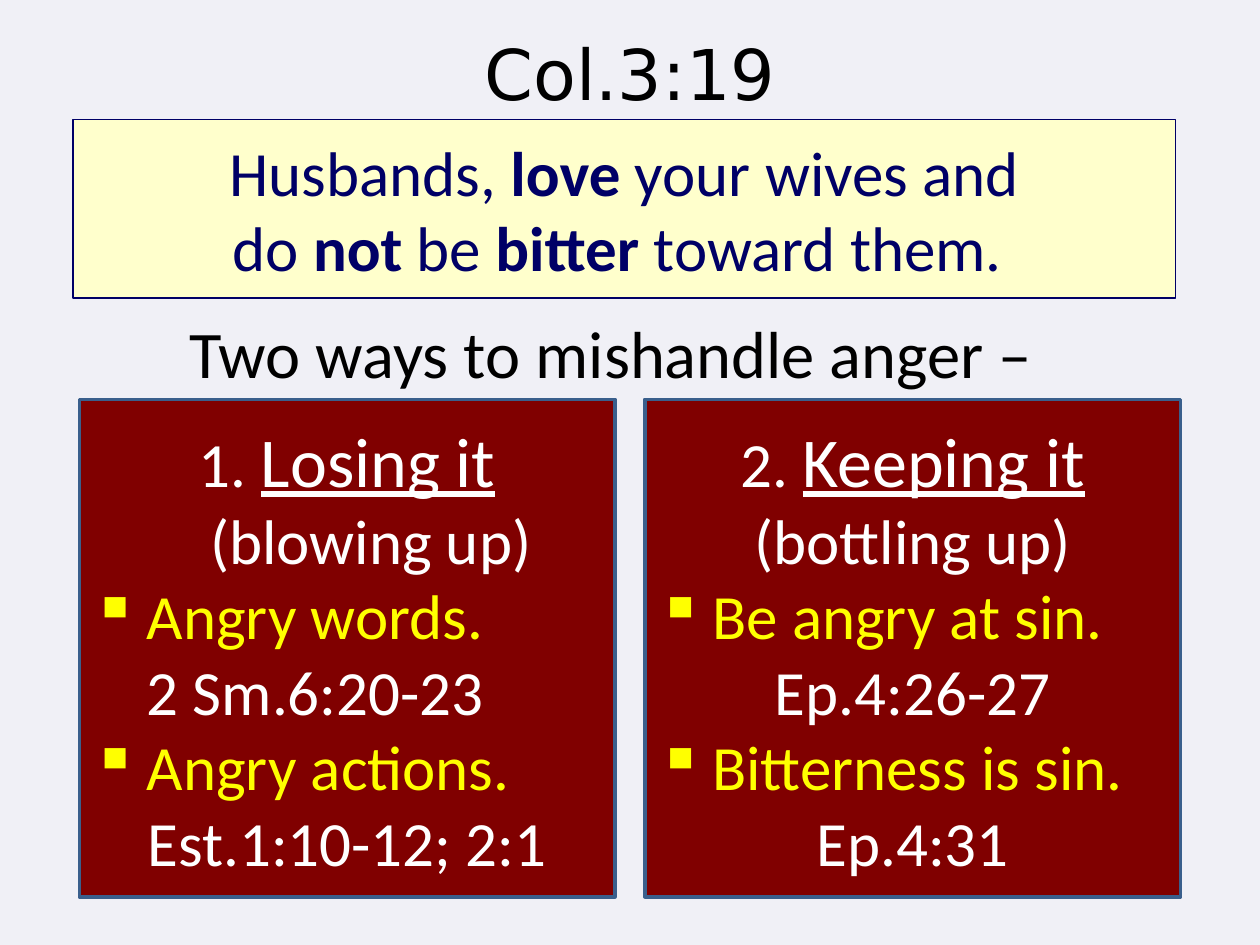
from lxml.etree import SubElement
from pptx import Presentation
from pptx.dml.color import RGBColor
from pptx.enum.shapes import MSO_SHAPE
from pptx.enum.text import MSO_ANCHOR, MSO_AUTO_SIZE, PP_ALIGN
from pptx.oxml.ns import qn
from pptx.util import Cm, Pt

COLORS = {
    "page": "F0F0F6", "black": "000000", "navy": "000066", "cream": "FFFFCC",
    "maroon": "800000", "steel": "3A5F8C", "white": "FFFFFF", "yellow": "FFFF00",
}

# Run formats
TITLE = {"name": "DejaVu Sans", "size": Pt(40), "color": "black"}
LEAD_IN = {"name": "Calibri", "size": Pt(38), "color": "black"}
VERSE = {"name": "Calibri", "size": Pt(36), "color": "navy"}
STRESSED = {**VERSE, "bold": True}
PLAIN = {**VERSE, "color": "white"}
HEADING = {**PLAIN, "size": Pt(40), "underline": True}
POINT = {**PLAIN, "color": "yellow"}

# Bullets: element, its attributes, hanging indent
NO_BULLET = ("a:buNone", {}, Cm(0))
NUMBER = ("a:buAutoNum", {"type": "arabicPeriod"}, Cm(0.95))
SQUARE = ("a:buChar", {"char": "▪"}, Cm(1.11))


def rgb(color):
    return RGBColor.from_string(COLORS[color])


def add_run(paragraph, text, style):
    """Add text in one format; a newline becomes a line break."""
    for number, line in enumerate(text.split("\n")):
        if number:
            paragraph.add_line_break()
        if line:
            run = paragraph.add_run()
            run.text = line
            for attribute, value in style.items():
                if attribute == "color":
                    run.font.color.rgb = rgb(value)
                else:
                    setattr(run.font, attribute, value)


def write(frame, paragraphs):
    """Fill a frame with (alignment, bullet, runs) paragraphs."""
    settings = {"word_wrap": True, "auto_size": MSO_AUTO_SIZE.NONE,
                "vertical_anchor": MSO_ANCHOR.MIDDLE}
    for attribute, value in settings.items():
        setattr(frame, attribute, value)
    for number, (alignment, bullet, runs) in enumerate(paragraphs):
        paragraph = frame.add_paragraph() if number else frame.paragraphs[0]
        paragraph.alignment = alignment
        paragraph.space_before = paragraph.space_after = Pt(0)
        tag, options, hanging = bullet
        properties = paragraph._p.get_or_add_pPr()
        properties.set("marL", str(hanging))
        properties.set("indent", str(-hanging))
        SubElement(properties, qn(tag), options)
        for text, style in runs:
            add_run(paragraph, text, style)


def centered(*runs):
    return PP_ALIGN.CENTER, NO_BULLET, runs


def point(*runs):
    return PP_ALIGN.LEFT, SQUARE, runs


def place(part, left, top, width, height):
    frame = {"left": left, "top": top, "width": width, "height": height}
    for attribute, value in frame.items():
        setattr(part, attribute, Cm(value))


def add_panel(slide, area, fill, line, line_width, paragraphs):
    panel = slide.shapes.add_shape(MSO_SHAPE.RECTANGLE, *map(Cm, area))
    panel.shadow.inherit = False
    panel.fill.solid()
    panel.fill.fore_color.rgb = rgb(fill)
    panel.line.color.rgb = rgb(line)
    panel.line.width = Pt(line_width)
    write(panel.text_frame, paragraphs)


def main():
    deck = Presentation()
    deck.slide_width, deck.slide_height = Cm(25.4), Cm(19.05)
    slide = deck.slides.add_slide(deck.slide_layouts[1])
    slide.background.fill.solid()
    slide.background.fill.fore_color.rgb = rgb("page")

    # Title and lead-in line
    reference, lead_in = slide.placeholders
    place(reference, 1.9, 0.2, 21.6, 2.54)
    write(reference.text_frame, [centered(("Col.3:19", TITLE))])
    place(lead_in, 1.2, 6.1, 22.23, 2)
    write(lead_in.text_frame, [centered(("Two ways to mishandle anger –", LEAD_IN))])

    # Verse
    add_panel(slide, (1.47, 2.41, 22.23, 3.6), "cream", "navy", 1, [centered(
        ("Husbands, ", VERSE), ("love", STRESSED), (" your wives and\ndo ", VERSE),
        ("not", STRESSED), (" be ", VERSE), ("bitter", STRESSED),
        (" toward them. ", VERSE))])

    # The two ways, side by side
    losing_it = [
        (PP_ALIGN.CENTER, NUMBER, [
            (" ", PLAIN), ("Losing it\n", HEADING), ("(blowing up)", PLAIN)]),
        point(("Angry words.\n", POINT), ("2 Sm.6:20-23", PLAIN)),
        point(("Angry actions.", POINT)),
        centered(("Est.1:10-12; 2:1", PLAIN)),
    ]
    keeping_it = [
        centered(("2. ", PLAIN), ("Keeping it\n", HEADING), ("(bottling up)", PLAIN)),
        point(("Be angry at sin.", POINT)),
        centered(("Ep.4:26-27", PLAIN)),
        point(("Bitterness is sin.", POINT)),
        centered(("Ep.4:31", PLAIN)),
    ]
    for column, way in enumerate([losing_it, keeping_it]):
        add_panel(slide, (1.6 + column * 11.4, 8.05, 10.8, 10.03),
                  "maroon", "steel", 2, way)

    deck.save("out.pptx")


if __name__ == "__main__":
    main()
